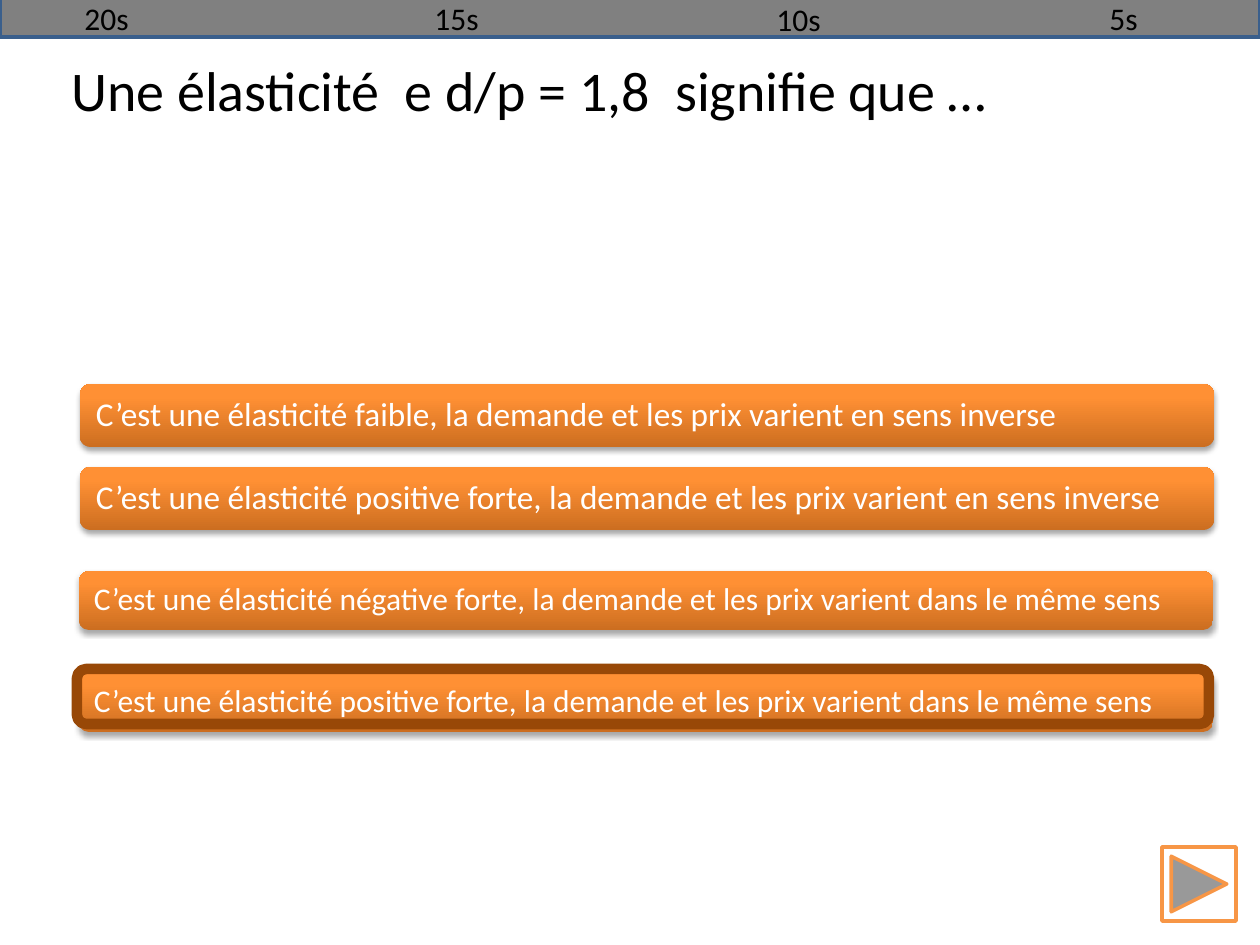
from dataclasses import dataclass

from lxml import etree
from pptx import Presentation
from pptx.dml.color import RGBColor
from pptx.enum.shapes import MSO_SHAPE
from pptx.enum.text import MSO_ANCHOR, PP_ALIGN
from pptx.oxml.ns import qn
from pptx.shapes.autoshape import Shape
from pptx.slide import Slide
from pptx.util import Emu, Pt

EMU_PER_INCH = 914400
PX_PER_INCH = 126
FONT = "Calibri"
ORANGE_STOPS = [(0, "CC6E20"), (80, "FF9034"), (100, "FF9136")]


@dataclass(frozen=True)
class Box:
    left: int
    top: int
    width: int
    height: int


@dataclass(frozen=True)
class Answer:
    text: str
    box: Box
    size: int
    inset: int


@dataclass(frozen=True)
class TimeMark:
    text: str
    box: Box


ANSWERS = [
    Answer("C’est une élasticité faible, la demande et les prix varient en sens inverse",
           Box(80, 384, 1134, 63), 19, 13),
    Answer("C’est une élasticité positive forte, la demande et les prix varient en sens inverse",
           Box(80, 467, 1134, 63), 19, 13),
    Answer("C’est une élasticité négative forte, la demande et les prix varient dans le même sens",
           Box(79, 571, 1134, 59), 18, 12),
    Answer("C’est une élasticité positive forte, la demande et les prix varient dans le même sens",
           Box(79, 673, 1134, 59), 18, 12),
]
TIME_MARKS = [
    TimeMark("5s", Box(1097, -7, 60, 50)),
    TimeMark("10s", Box(764, -6, 79, 50)),
    TimeMark("15s", Box(422, -7, 79, 50)),
    TimeMark("20s", Box(72, -7, 79, 50)),
]


def px(value: int) -> Emu:
    return Emu(round(value * EMU_PER_INCH / PX_PER_INCH))


def rgb(value: str) -> RGBColor:
    return RGBColor.from_string(value)


def place(box: Box) -> tuple[Emu, Emu, Emu, Emu]:
    return px(box.left), px(box.top), px(box.width), px(box.height)


def write(shape: Shape, text: str, size: int, color: str) -> None:
    paragraph = shape.text_frame.paragraphs[0]
    paragraph.text = text
    paragraph.alignment = PP_ALIGN.LEFT
    for run in paragraph.runs:
        run.font.name = FONT
        run.font.size = Pt(size)
        run.font.color.rgb = rgb(color)


def add_text(slide: Slide, box: Box, text: str, size: int, wrap: bool = True) -> None:
    shape = slide.shapes.add_textbox(*place(box))
    shape.text_frame.word_wrap = wrap
    write(shape, text, size, "000000")


def add_shape(slide: Slide, kind: MSO_SHAPE, box: Box, fill: str | None = None,
              line: str | None = None, line_width: int = 0) -> Shape:
    shape = slide.shapes.add_shape(kind, *place(box))
    if fill:
        shape.fill.solid()
        shape.fill.fore_color.rgb = rgb(fill)
    else:
        shape.fill.background()
    if line:
        shape.line.color.rgb = rgb(line)
        shape.line.width = Pt(line_width)
    else:
        shape.line.fill.background()
    shape.shadow.inherit = False
    return shape


def add_color(parent: etree._Element, color: str) -> etree._Element:
    return etree.SubElement(parent, qn("a:srgbClr"), val=color)


def shade_orange(shape: Shape) -> None:
    """Fill from dark at the bottom to light at the top."""
    shape.fill.gradient()
    shape.fill.gradient_angle = 90
    stops = shape._element.spPr.find(".//" + qn("a:gsLst"))
    for stop in list(stops):
        stops.remove(stop)
    for position, color in ORANGE_STOPS:
        stop = etree.SubElement(stops, qn("a:gs"), pos=str(position * 1000))
        add_color(stop, color)


def drop_shadow(shape: Shape) -> None:
    effects = shape._element.spPr.find(qn("a:effectLst"))
    shadow = etree.SubElement(effects, qn("a:outerShdw"), blurRad=str(Pt(3.1)),
                              dist=str(Pt(1.8)), dir="5400000", rotWithShape="0")
    etree.SubElement(add_color(shadow, "000000"), qn("a:alpha"), val="35000")


def add_answer(slide: Slide, answer: Answer) -> None:
    shape = add_shape(slide, MSO_SHAPE.ROUNDED_RECTANGLE, answer.box)
    shade_orange(shape)
    drop_shadow(shape)
    frame = shape.text_frame
    frame.word_wrap = True
    frame.vertical_anchor = MSO_ANCHOR.MIDDLE
    frame.margin_left = frame.margin_right = px(answer.inset)
    frame.margin_top = frame.margin_bottom = px(answer.inset)
    write(shape, answer.text, answer.size, "FFFFFF")
    frame.paragraphs[0].line_spacing = 0.9


def main() -> None:
    presentation = Presentation()
    presentation.slide_width, presentation.slide_height = px(1260), px(945)
    slide = presentation.slides.add_slide(presentation.slide_layouts[6])

    add_text(slide, Box(59, 49, 1134, 154), "Une élasticité  e d/p = 1,8  signifie que …", 32)
    for answer in ANSWERS:
        add_answer(slide, answer)
    add_shape(slide, MSO_SHAPE.ROUNDED_RECTANGLE, Box(77, 669, 1132, 55),
              line="984807", line_width=6)
    next_button = add_shape(slide, MSO_SHAPE.ACTION_BUTTON_BACK_OR_PREVIOUS,
                            Box(1162, 847, 74, 74), "FFFFFF", "F79646", 2)
    next_button.rotation = 180

    add_shape(slide, MSO_SHAPE.RECTANGLE, Box(0, -2, 1260, 39), "808080", "3A5F8C", 2)
    for mark in TIME_MARKS:
        add_text(slide, mark.box, mark.text, 18, wrap=False)

    presentation.save("out.pptx")


if __name__ == "__main__":
    main()
